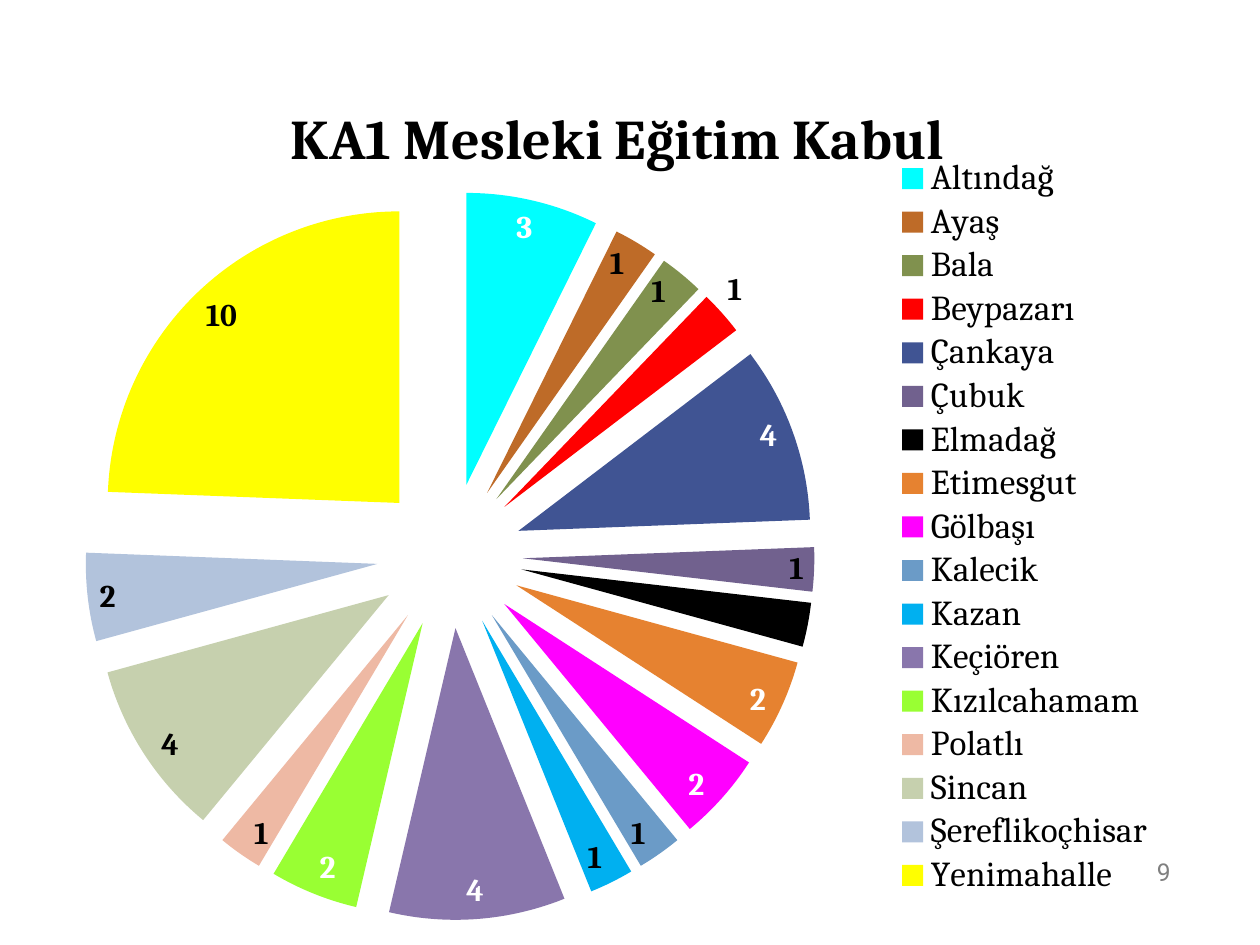
from lxml import etree
from pptx import Presentation
from pptx.chart.data import CategoryChartData
from pptx.dml.color import RGBColor
from pptx.enum.chart import XL_CHART_TYPE, XL_LABEL_POSITION, XL_LEGEND_POSITION
from pptx.enum.text import MSO_ANCHOR, PP_ALIGN
from pptx.oxml.ns import qn
from pptx.util import Cm, Pt

PIE = XL_CHART_TYPE.PIE
LEGEND_RIGHT = XL_LEGEND_POSITION.RIGHT
BEST_FIT = XL_LABEL_POSITION.BEST_FIT
MIDDLE = MSO_ANCHOR.MIDDLE
RIGHT = PP_ALIGN.RIGHT

BLACK = RGBColor(0, 0, 0)
WHITE = RGBColor(255, 255, 255)
GRAY = RGBColor(128, 128, 128)

TITLE = "KA1 Mesleki Eğitim Kabul"
EXPLOSION = 25

# District, accepted projects, slice colour, label colour
DISTRICTS = [
    ("Altındağ", 3, RGBColor(0x00, 0xFF, 0xFF), WHITE),
    ("Ayaş", 1, RGBColor(0xBE, 0x6B, 0x28), BLACK),
    ("Bala", 1, RGBColor(0x80, 0x91, 0x4E), BLACK),
    ("Beypazarı", 1, RGBColor(0xFF, 0x00, 0x00), BLACK),
    ("Çankaya", 4, RGBColor(0x40, 0x54, 0x93), WHITE),
    ("Çubuk", 1, RGBColor(0x71, 0x61, 0x8E), BLACK),
    ("Elmadağ", 1, BLACK, BLACK),
    ("Etimesgut", 2, RGBColor(0xE6, 0x82, 0x30), WHITE),
    ("Gölbaşı", 2, RGBColor(0xFF, 0x00, 0xFF), WHITE),
    ("Kalecik", 1, RGBColor(0x6B, 0x9B, 0xC7), BLACK),
    ("Kazan", 1, RGBColor(0x00, 0xB0, 0xF0), BLACK),
    ("Keçiören", 4, RGBColor(0x89, 0x76, 0xAC), WHITE),
    ("Kızılcahamam", 2, RGBColor(0x99, 0xFF, 0x33), WHITE),
    ("Polatlı", 1, RGBColor(0xEE, 0xB9, 0xA4), BLACK),
    ("Sincan", 4, RGBColor(0xC6, 0xD0, 0xAE), BLACK),
    ("Şereflikoçhisar", 2, RGBColor(0xB2, 0xC3, 0xDC), BLACK),
    ("Yenimahalle", 10, RGBColor(0xFF, 0xFF, 0x00), BLACK),
]


class SlideBuilder:
    title_font = {"name": "Cambria", "size": Pt(32), "bold": True, "color": BLACK}
    legend_font = {"name": "Cambria", "size": Pt(20), "bold": False, "color": BLACK}
    label_font = {"name": "Cambria", "size": Pt(18), "bold": True, "color": BLACK}
    number_font = {"name": "Roboto", "size": Pt(14), "color": GRAY}

    def __init__(self, slide):
        self.slide = slide

    def format_font(self, font, style, **changes):
        for name, value in {**style, **changes}.items():
            if name == "color":
                font.color.rgb = value
            else:
                setattr(font, name, value)

    def place(self, element, after=None, **percentages):
        """Give a chart part a manual layout in percent of the chart."""
        for old_layout in element.findall(qn("c:layout")):
            element.remove(old_layout)
        layout = etree.Element(qn("c:layout"))
        manual = etree.SubElement(layout, qn("c:manualLayout"))
        if after is None:
            etree.SubElement(manual, qn("c:layoutTarget"), val="inner")
        for axis in ("x", "y"):
            etree.SubElement(manual, qn(f"c:{axis}Mode"), val="edge")
        for name, value in percentages.items():
            etree.SubElement(manual, qn(f"c:{name}"), val=str(value / 100))
        if after is None:
            element.insert(0, layout)
        else:
            element.find(qn(after)).addnext(layout)

    def add_pie(self, left, top, width, height):
        data = CategoryChartData()
        data.categories = [district[0] for district in DISTRICTS]
        data.add_series(TITLE, [district[1] for district in DISTRICTS])
        chart = self.slide.shapes.add_chart(PIE, left, top, width, height, data).chart
        self.format_font(chart.font, self.legend_font, size=Pt(10))

        # Title and legend
        chart.has_title = True
        paragraph = chart.chart_title.text_frame.paragraphs[0]
        run = paragraph.add_run()
        run.text = TITLE
        self.format_font(run.font, self.title_font)
        chart.has_legend = True
        chart.legend.position = LEGEND_RIGHT
        chart.legend.include_in_layout = False
        self.format_font(chart.legend.font, self.legend_font)

        # Slices and value labels
        plot = chart.plots[0]
        plot.vary_by_categories = True
        series = plot.series[0]
        labels = series.data_labels
        labels.show_value = True
        labels.position = BEST_FIT
        self.format_font(labels.font, self.label_font)
        for index, (_, _, color, label_color) in enumerate(DISTRICTS):
            point = series.points[index]
            point.format.fill.solid()
            point.format.fill.fore_color.rgb = color
            point.format.line.fill.background()
            label = point.data_label
            self.format_font(label.font, self.label_font, color=label_color)
            label.position = BEST_FIT
        explosion = etree.Element(qn("c:explosion"), val=str(EXPLOSION))
        chart.element.find(".//" + qn("c:dPt")).addprevious(explosion)

        # Placement inside the chart
        parts = {name: chart.element.find(".//" + qn(f"c:{name}"))
                 for name in ("title", "legend", "plotArea")}
        self.place(parts["title"], "c:tx", x=22.7, y=2.6)
        self.place(parts["legend"], "c:legendPos", x=70.9, y=10.1, w=24, h=87.4)
        self.place(parts["plotArea"], x=1.7, y=14.3, w=69.4, h=85.7)

    def add_text(self, text, left, top, width, height):
        frame = self.slide.shapes.add_textbox(left, top, width, height).text_frame
        frame.word_wrap = True
        frame.vertical_anchor = MIDDLE
        paragraph = frame.paragraphs[0]
        paragraph.alignment = RIGHT
        run = paragraph.add_run()
        run.text = text
        self.format_font(run.font, self.number_font)


def main():
    presentation = Presentation()
    presentation.slide_width = Cm(25.4)
    presentation.slide_height = Cm(19.05)
    slide = presentation.slides.add_slide(presentation.slide_layouts[6])
    builder = SlideBuilder(slide)
    builder.add_pie(Cm(0), Cm(1.4), Cm(24.92), Cm(17.15))
    builder.add_text("9", Cm(17.93), Cm(17.07), Cm(5.92), Cm(1.02))
    presentation.save("out.pptx")


if __name__ == "__main__":
    main()
